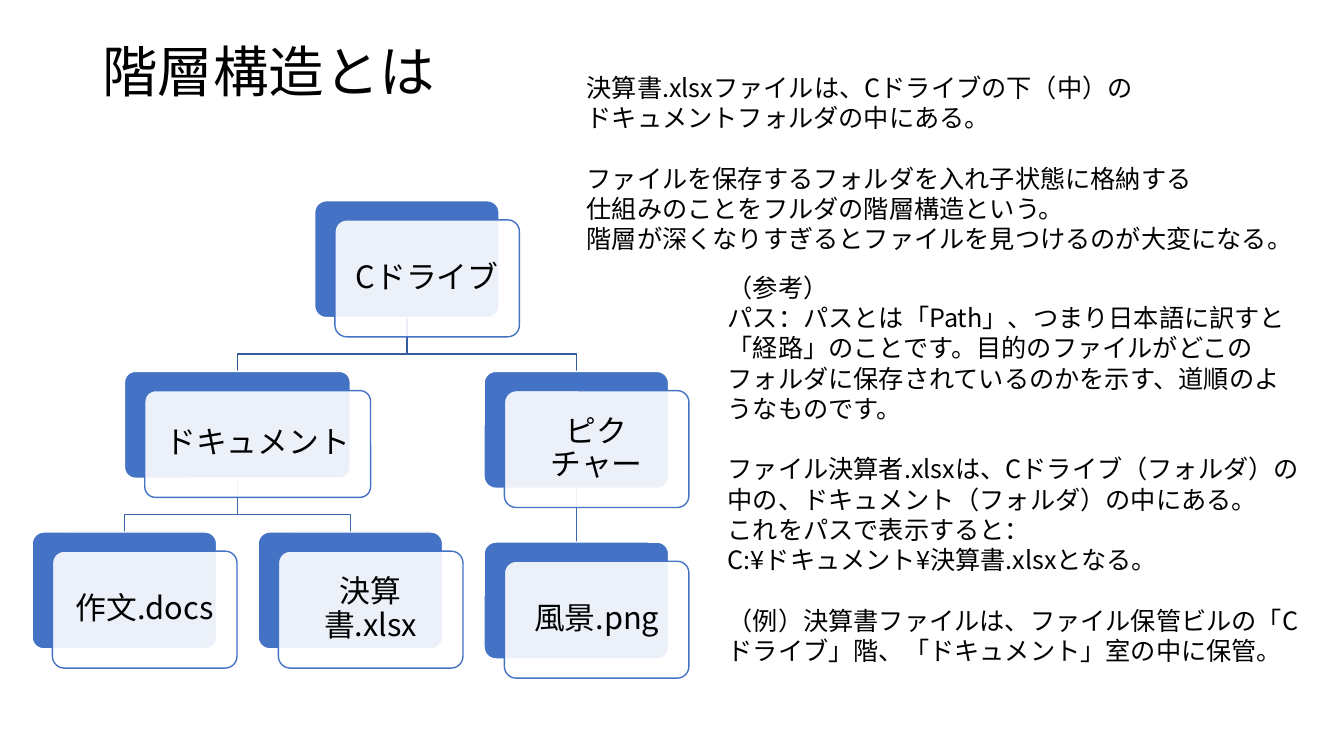
from lxml import etree
from pptx import Presentation
from pptx.dml.color import RGBColor
from pptx.enum import shapes, text
from pptx.oxml import ns
from pptx.util import Pt

FONT = "Noto Sans CJK JP"
BLACK = RGBColor(0x00, 0x00, 0x00)
WHITE = RGBColor(0xFF, 0xFF, 0xFF)
BLUE = RGBColor(0x44, 0x72, 0xC4)
ROOT_LINE = RGBColor(0x36, 0x5B, 0x9D)
BRANCH_LINE = RGBColor(0x3E, 0x67, 0xB2)

CARD_W, CARD_H = 131.8, 83.5
PITCH, LEVEL_GAP, BEND = 161.4, 38.4, 26
SHIFT_X, SHIFT_Y = 14.5, 13.7

TREE = ("Cドライブ", [
    ("ドキュメント", [("作文.docs", []), ("決算書.xlsx", [])]),
    ("ピクチャー", [("風景.png", [])]),
])
SIZES = {"ドキュメント": (161.3, 76.3)}

SUMMARY = [
    ["決算書.xlsxファイルは、Cドライブの下（中）の",
     "ドキュメントフォルダの中にある。"],
    ["ファイルを保存するフォルダを入れ子状態に格納する",
     "仕組みのことをフルダの階層構造という。",
     "階層が深くなりすぎるとファイルを見つけるのが大変になる。"],
]
REFERENCE = [
    ["（参考）",
     "パス：パスとは「Path」、つまり日本語に訳すと「経路」のことです。"
     "目的のファイルがどこのフォルダに保存されているのかを示す、道順のようなものです。"],
    ["ファイル決算者.xlsxは、Cドライブ（フォルダ）の中の、ドキュメント（フォルダ）の中にある。",
     "これをパスで表示すると：",
     "C:¥ドキュメント¥決算書.xlsxとなる。"],
    ["（例）決算書ファイルは、ファイル保管ビルの「Cドライブ」階、「ドキュメント」室の中に保管。"],
]


def set_font(p, size):
    """Give a paragraph the slide's font for Latin and Japanese text."""
    p.font.size = Pt(size)
    p.font.color.rgb = BLACK
    p.font.name = FONT
    props = p._p.get_or_add_pPr().find(ns.qn("a:defRPr"))
    etree.SubElement(props, ns.qn("a:ea"), typeface=FONT)


def add_title(slide, x, y, w, h):
    """Place and format the title placeholder."""
    sp = slide.shapes.title
    sp.left, sp.top, sp.width, sp.height = Pt(x), Pt(y), Pt(w), Pt(h)
    tf = sp.text_frame
    tf.text = "階層構造とは"
    tf.auto_size = text.MSO_AUTO_SIZE.NONE
    tf.vertical_anchor = text.MSO_ANCHOR.MIDDLE
    p = tf.paragraphs[0]
    p.alignment = text.PP_ALIGN.LEFT
    p.line_spacing = 0.9
    set_font(p, 39.6)


def add_notes_box(slide, groups, x, y, w, h):
    """Write groups of paragraphs, one line apart, in a text box."""
    tf = slide.shapes.add_textbox(Pt(x), Pt(y), Pt(w), Pt(h)).text_frame
    tf.word_wrap = True
    p = None
    for group in groups:
        for i, line in enumerate(group):
            first = p is None
            p = tf.paragraphs[0] if first else tf.add_paragraph()
            p.text = line
            if i == 0 and not first:
                p.space_before = Pt(21.6)
            set_font(p, 18)


def add_plate(slide, x, y, w, h, fill, line):
    """Draw one rounded plate of a card."""
    sp = slide.shapes.add_shape(shapes.MSO_SHAPE.ROUNDED_RECTANGLE,
                                Pt(x), Pt(y), Pt(w), Pt(h))
    sp.adjustments[0] = 0.1
    sp.shadow.inherit = False
    sp.fill.solid()
    sp.fill.fore_color.rgb = fill
    sp.line.color.rgb = line
    sp.line.width = Pt(1)
    return sp


def add_card(slide, label, x, y, w, h):
    """Draw a blue plate with a translucent labelled plate over it."""
    back = add_plate(slide, x, y, w, h, BLUE, WHITE)
    front = add_plate(slide, x + SHIFT_X, y + SHIFT_Y, w, h, WHITE, BLUE)
    color = front._element.spPr.find(ns.qn("a:solidFill"))[0]
    etree.SubElement(color, ns.qn("a:alpha"), val="90000")
    tf = front.text_frame
    tf.word_wrap = True
    tf.vertical_anchor = text.MSO_ANCHOR.MIDDLE
    tf.margin_left = tf.margin_right = tf.margin_top = tf.margin_bottom = Pt(9)
    p = tf.paragraphs[0]
    p.text = label
    p.alignment = text.PP_ALIGN.CENTER
    p.line_spacing = 0.9
    set_font(p, 22)
    return back


def add_link(slide, parent, child, color):
    """Link a parent card to a child card, behind all cards."""
    x1, y1 = parent.left + parent.width // 2, parent.top + parent.height
    x2, y2 = child.left + child.width // 2, child.top
    if abs(x1 - x2) < Pt(1):
        link = slide.shapes.add_connector(shapes.MSO_CONNECTOR.STRAIGHT,
                                          x1, y1, x2, y2)
        link.begin_connect(parent, 2)
        link.end_connect(child, 0)
        etree.SubElement(link._element.spPr, ns.qn("a:effectLst"))
    else:
        bend = y1 + Pt(BEND)
        outline = slide.shapes.build_freeform(x1, y1)
        outline.add_line_segments([(x1, bend), (x2, bend), (x2, y2)], close=False)
        link = outline.convert_to_shape()
        link.fill.background()
        link.shadow.inherit = False
    link.line.color.rgb = color
    link.line.width = Pt(1)
    slide.shapes._spTree.insert(2, link._element)


def add_branch(slide, node, x, y, color=ROOT_LINE):
    """Draw a node above its children; return its card and leaf count."""
    label, children = node
    w, h = SIZES.get(label, (CARD_W, CARD_H))
    cards, leaves = [], 0
    for child in children:
        card, count = add_branch(slide, child, x + leaves * PITCH,
                                 y + h + LEVEL_GAP, BRANCH_LINE)
        cards.append(card)
        leaves += count
    if cards:
        centers = [c.left.pt + c.width.pt / 2 for c in cards]
        x = (centers[0] + centers[-1]) / 2 - w / 2
    back = add_card(slide, label, x, y, w, h)
    for card in cards:
        add_link(slide, back, card, color)
    return back, max(leaves, 1)


def main():
    """Build and save the slide."""
    prs = Presentation()
    prs.slide_width, prs.slide_height = Pt(960), Pt(540)
    slide = prs.slides.add_slide(prs.slide_layouts[5])
    add_title(slide, 66, 28.8, 828, 49)
    add_branch(slide, TREE, 23, 143.4)
    add_notes_box(slide, SUMMARY, 412, 48.3, 523.5, 160)
    add_notes_box(slide, REFERENCE, 512.8, 191, 422.6, 291)
    prs.save("out.pptx")


if __name__ == "__main__":
    main()
